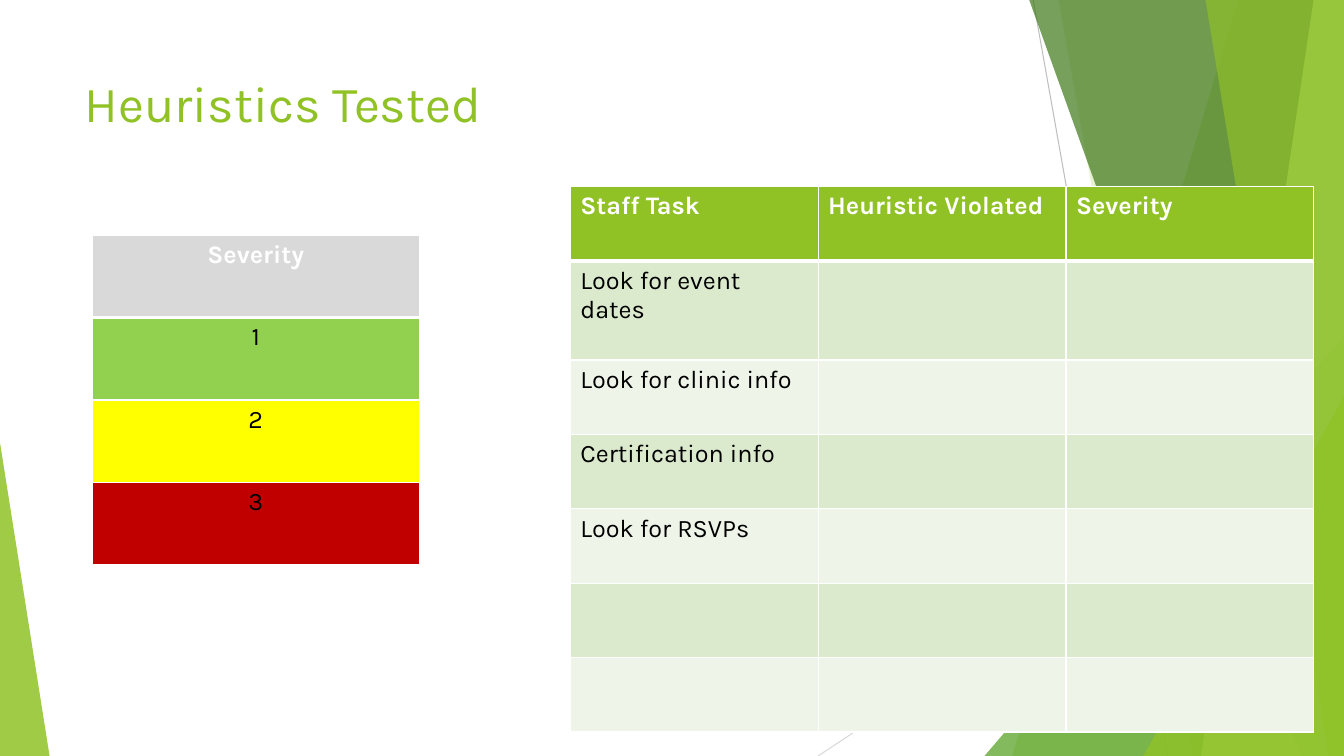
"""Build the Heuristics Tested slide on a grid of 160 columns by 90 rows."""
from dataclasses import dataclass

from lxml import etree
from pptx import Presentation
from pptx import util as u
from pptx.dml.color import RGBColor
from pptx.enum import shapes, text
from pptx.oxml.ns import qn

COLUMNS, ROWS = 160, 90
CELL = u.Inches(7.5) / ROWS
FONT = "Karla"
WHITE, BLACK, GREEN = "FFFFFF", "000000", "90C226"
PALE, PALER = "DBE9CD", "EEF4E8"
BLEED = -0.1


@dataclass
class Ray:
    start: tuple[float, float]
    end: tuple[float, float]
    color: str


@dataclass
class Band:
    top_left: float
    bottom_left: float
    color: str
    opacity: int


@dataclass
class Triangle:
    left: float
    top: float
    width: float
    apex: float
    color: str
    opacity: int


@dataclass
class Grid:
    left: float
    top: float
    column_width: float
    row_heights: list[float]
    rows: list[list[str]]
    fills: list[str]
    alignment: text.PP_ALIGN


RAYS = [
    Ray((123, 0), (139, ROWS), "BFBFBF"),
    Ray((COLUMNS, 48.4), (97.4, ROWS), "D9D9D9"),
]
FACETS = [
    Band(147.4, 120.5, GREEN, 30),
    Band(126, 142, GREEN, 20),
    Triangle(117.2, 40, 42.8, 1, "54A021", 72),
    Band(122.5, 154.9, "3F7819", 70),
    Band(156.4, 143, "C0E474", 70),
    Band(143.5, 158.2, GREEN, 65),
    Triangle(136.1, 47.2, 23.9, 1, GREEN, 80),
    Triangle(0, 52.7, 5.9, 0, GREEN, 85),
]
TASKS = ["Look for event dates", "Look for clinic info", "Certification info", "Look for RSVPs", "", ""]
GRIDS = [
    Grid(67.9, 22.2, 29.5, [8.86, 11.8] + [8.86] * 5,
         [["Staff Task", "Heuristic Violated", "Severity"]] + [[task, "", ""] for task in TASKS],
         [GREEN] + [PALE, PALER] * 3, text.PP_ALIGN.LEFT),
    Grid(11, 28, 38.9, [9.81] * 4, [["Severity"], ["1"], ["2"], ["3"]],
         ["D9D9D9", "92D050", "FFFF00", "C00000"], text.PP_ALIGN.CENTER),
]


def span(cells: float) -> u.Emu:
    return u.Emu(round(cells * CELL))


def rgb(color: str) -> RGBColor:
    return RGBColor.from_string(color)


def add_run(paragraph, words: str, size: float, color: str, bold: bool = False) -> None:
    run = paragraph.add_run()
    run.text = words
    run.font.name = FONT
    run.font.size = u.Pt(size)
    run.font.bold = bold
    run.font.color.rgb = rgb(color)


def draw_ray(slide, ray: Ray) -> None:
    connector = slide.shapes.add_connector(
        shapes.MSO_CONNECTOR.STRAIGHT, *map(span, ray.start + ray.end))
    connector.line.color.rgb = rgb(ray.color)
    connector.line.width = u.Pt(0.75)
    etree.SubElement(connector._element.spPr, qn("a:effectLst"))


def draw_facet(slide, facet: Band | Triangle) -> None:
    if isinstance(facet, Band):
        builder = slide.shapes.build_freeform(span(facet.top_left), span(BLEED))
        corners = [(COLUMNS, BLEED), (COLUMNS, ROWS), (facet.bottom_left, ROWS)]
        builder.add_line_segments([(span(x), span(y)) for x, y in corners], close=True)
        shape = builder.convert_to_shape()
    else:
        shape = slide.shapes.add_shape(
            shapes.MSO_SHAPE.ISOSCELES_TRIANGLE, span(facet.left), span(facet.top),
            span(facet.width), span(ROWS - facet.top))
        shape.adjustments[0] = facet.apex
    shape.shadow.inherit = False
    shape.fill.solid()
    shape.fill.fore_color.rgb = rgb(facet.color)
    color_element = shape._element.spPr.find(qn("a:solidFill"))[0]
    etree.SubElement(color_element, qn("a:alpha"), val=str(facet.opacity * 1000))
    shape.line.fill.background()


def draw_title(slide, words: str) -> None:
    box = slide.shapes.add_textbox(span(8.9), span(8), span(112.8), span(17.3))
    box.text_frame.word_wrap = True
    box.text_frame.vertical_anchor = text.MSO_ANCHOR.TOP
    add_run(box.text_frame.paragraphs[0], words, 36, GREEN)


def set_borders(cell, widths: dict[str, float]) -> None:
    properties = cell._tc.get_or_add_tcPr()
    for position, (side, width) in enumerate(widths.items()):
        border = etree.Element(qn(f"a:ln{side}"), w=str(u.Pt(width)))
        fill = etree.SubElement(border, qn("a:solidFill"))
        etree.SubElement(fill, qn("a:srgbClr"), val=WHITE)
        properties.insert(position, border)


def draw_grid(slide, grid: Grid) -> None:
    column_count = len(grid.rows[0])
    table = slide.shapes.add_table(
        len(grid.rows), column_count, span(grid.left), span(grid.top),
        span(grid.column_width * column_count), span(sum(grid.row_heights))).table
    for column in table.columns:
        column.width = span(grid.column_width)
    for index, words in enumerate(grid.rows):
        table.rows[index].height = span(grid.row_heights[index])
        header = index == 0
        for cell, label in zip(table.rows[index].cells, words):
            cell.fill.solid()
            cell.fill.fore_color.rgb = rgb(grid.fills[index])
            set_borders(cell, {"L": 1, "R": 1, "T": 3 if index == 1 else 1, "B": 3 if header else 1})
            paragraph = cell.text_frame.paragraphs[0]
            paragraph.alignment = grid.alignment
            if label:
                add_run(paragraph, label, 18, WHITE if header else BLACK, header)


def main() -> None:
    presentation = Presentation()
    presentation.slide_width, presentation.slide_height = span(COLUMNS), span(ROWS)
    slide = presentation.slides.add_slide(presentation.slide_layouts[6])
    for ray in RAYS:
        draw_ray(slide, ray)
    for facet in FACETS:
        draw_facet(slide, facet)
    draw_title(slide, "Heuristics Tested")
    for grid in GRIDS:
        draw_grid(slide, grid)
    presentation.save("out.pptx")


if __name__ == "__main__":
    main()
